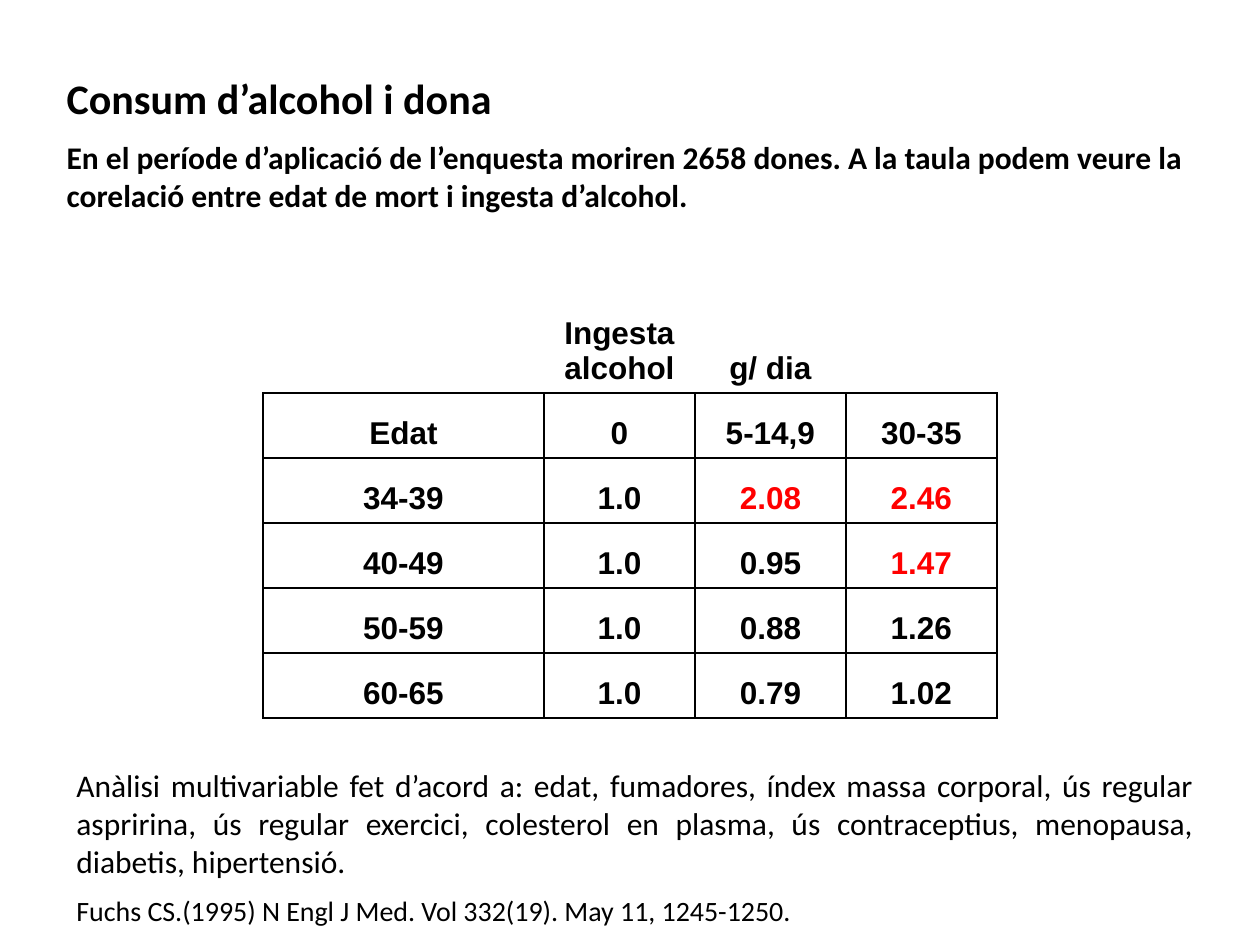
"""Build the slide on alcohol intake and mortality in women."""
from lxml import etree
from pptx import Presentation
from pptx.dml.color import RGBColor
from pptx.enum.text import MSO_ANCHOR, MSO_AUTO_SIZE, PP_ALIGN
from pptx.oxml.ns import qn
from pptx.util import Pt

BLACK = RGBColor(0, 0, 0)
RED = RGBColor(255, 0, 0)
TOP, BOTTOM = MSO_ANCHOR.TOP, MSO_ANCHOR.BOTTOM
GROW = MSO_AUTO_SIZE.SHAPE_TO_FIT_TEXT
LEFT, CENTER, FULL = PP_ALIGN.LEFT, PP_ALIGN.CENTER, PP_ALIGN.JUSTIFY
SCALE = 914400 / 126

HEAD = [
    ("Consum d’alcohol i dona", 24),
    ("En el període d’aplicació de l’enquesta moriren 2658 dones. A la taula "
     "podem veure la corelació entre edat de mort i ingesta d’alcohol.", 18),
]
NOTES = [
    ("Anàlisi multivariable fet d’acord a: edat, fumadores, índex massa "
     "corporal, ús regular aspririna, ús regular exercici, colesterol en "
     "plasma, ús contraceptius, menopausa, diabetis, hipertensió.", 18),
    ("Fuchs CS.(1995) N Engl J Med. Vol 332(19). May 11, 1245-1250.", 16),
]
RISKS = [
    ["", "Ingesta alcohol", "g/ dia", ""],
    ["Edat", "0", "5-14,9", "30-35"],
    ["34-39", "1.0", "2.08", "2.46"],
    ["40-49", "1.0", "0.95", "1.47"],
    ["50-59", "1.0", "0.88", "1.26"],
    ["60-65", "1.0", "0.79", "1.02"],
]
HIGH = {"2.08", "2.46", "1.47"}


def emu(px):
    return round(px * SCALE)


def apply(item, form):
    for name, value in form.items():
        setattr(item, name, value)


class Deck:
    def __init__(self, wide, high):
        self.show = Presentation()
        apply(self.show, {"slide_width": emu(wide), "slide_height": emu(high)})
        self.slide = self.show.slides.add_slide(self.show.slide_layouts[5])

    def style(self, para, size, font="Calibri", bold=False, color=BLACK, align=LEFT):
        para.alignment = align
        apply(para.font, {"name": font, "size": Pt(size), "bold": bold})
        para.font.color.rgb = color

    def fill(self, shape, lines, **form):
        frame = shape.text_frame
        apply(frame, {"word_wrap": True, "auto_size": GROW, "vertical_anchor": TOP})
        for i, (text, size) in enumerate(lines):
            para = frame.add_paragraph() if i else frame.paragraphs[0]
            para.text = text
            para.space_before = Pt(size / 2 if i else 0)
            self.style(para, size, **form)

    def title(self, box, lines):
        shape = self.slide.shapes.title
        apply(shape, dict(zip(("left", "top", "width", "height"), map(emu, box))))
        self.fill(shape, lines, bold=True)

    def text(self, box, lines):
        shape = self.slide.shapes.add_textbox(*map(emu, box))
        self.fill(shape, lines, align=FULL)

    def edge(self, cell, sides):
        props = cell._tc.get_or_add_tcPr()
        for side in "LRTB":
            line = etree.SubElement(props, qn("a:ln" + side), w=str(Pt(1)))
            if side in sides:
                solid = etree.SubElement(line, qn("a:solidFill"))
                etree.SubElement(solid, qn("a:srgbClr"), val=str(BLACK))
            else:
                etree.SubElement(line, qn("a:noFill"))

    def table(self, left, top, cols, rows, data):
        box = map(emu, (left, top, sum(cols), sum(rows)))
        table = self.slide.shapes.add_table(len(rows), len(cols), *box).table
        apply(table, {"first_row": False, "horz_banding": False})
        for col, px in zip(table.columns, cols):
            col.width = emu(px)
        for r, px in enumerate(rows):
            table.rows[r].height = emu(px)
            for c, text in enumerate(data[r]):
                cell = table.cell(r, c)
                apply(cell, {"text": text, "vertical_anchor": BOTTOM})
                self.style(cell.text_frame.paragraphs[0], 18, "Arial", True,
                           RED if text in HIGH else BLACK, CENTER)
                self.edge(cell, "LRTB" if r else "B")
                cell.fill.background()


def main():
    deck = Deck(1260, 945)
    deck.table(263, 254, [281] + [151] * 3, [139] + [65] * 5, RISKS)
    deck.title((54, 66, 1181, 158), HEAD)
    deck.text((64, 760, 1142, 233), NOTES)
    deck.show.save("out.pptx")


if __name__ == "__main__":
    main()
